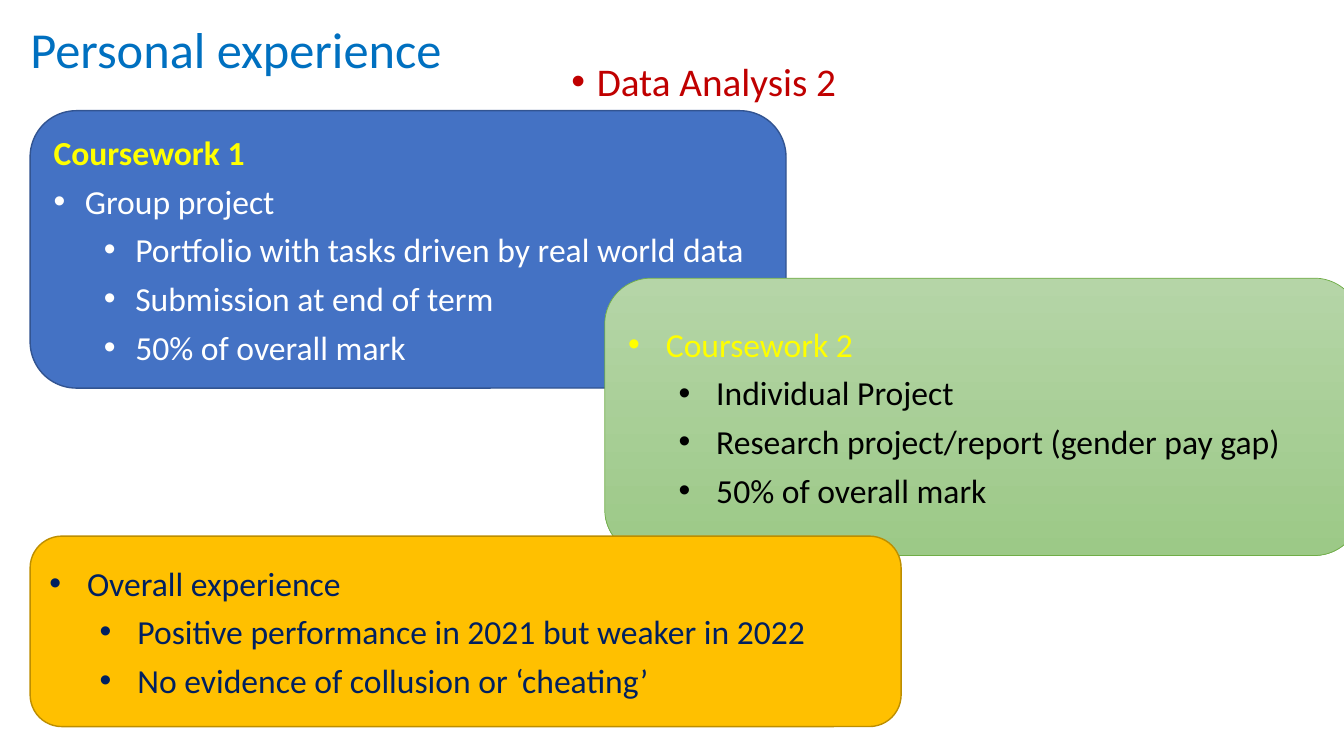
"""Builds the slide on personal experience with two pieces of coursework."""
from lxml import etree
from pptx import Presentation
from pptx.dml.color import RGBColor
from pptx.enum.shapes import MSO_SHAPE
from pptx.enum.text import MSO_ANCHOR, MSO_AUTO_SIZE, PP_ALIGN
from pptx.oxml.ns import qn
from pptx.util import Cm, Pt

ROUND = MSO_SHAPE.ROUNDED_RECTANGLE
MIDDLE = MSO_ANCHOR.MIDDLE
FIXED = MSO_AUTO_SIZE.NONE
LEFT = PP_ALIGN.LEFT
STEP = 1.27


def paint(color, value):
    color.rgb = RGBColor.from_string(value)


def style(para, size, color, hang=0, level=0, bold=False):
    para.alignment = LEFT
    para.level = level
    for run in para.runs:
        run.font.name = "Calibri"
        run.font.size = Pt(size)
        run.font.bold = bold
        paint(run.font.color, color)
    if hang:
        props = para._p.get_or_add_pPr()
        props.set("marL", str(Cm(hang + level * STEP)))
        props.set("indent", str(Cm(-hang)))
        etree.SubElement(props, qn("a:buFont")).set("typeface", "Arial")
        etree.SubElement(props, qn("a:buChar")).set("char", "•")


deck = Presentation()
deck.slide_width, deck.slide_height = Cm(33.87), Cm(19.05)
slide = deck.slides.add_slide(deck.slide_layouts[5])

title = slide.shapes.title
title.left, title.top, title.width, title.height = Cm(0.51), Cm(0.23), Cm(13.13), Cm(2.16)
frame = title.text_frame
frame.text = "Personal experience"
frame.auto_size = FIXED
frame.vertical_anchor = MIDDLE
para = frame.paragraphs[0]
para.line_spacing = 0.9
style(para, 36, "0070C0")

topic = slide.shapes.add_textbox(Cm(14.15), Cm(1.45), Cm(9.5), Cm(1.45))
frame = topic.text_frame
frame.text = "Data Analysis 2"
frame.word_wrap = True
para = frame.paragraphs[0]
para.line_spacing = 0.9
para.space_before, para.space_after = Pt(10), Pt(6)
style(para, 28, "C00000", 0.64)

cards = [
    ((0.76, 2.79, 19.05, 6.99), ["4472C4"], "325491", 1, "FFFF00", "FFFFFF", 0.79, [
        (0, "Coursework 1"),
        (0, "Group project"),
        (1, "Portfolio with tasks driven by real world data"),
        (1, "Submission at end of term"),
        (1, "50% of overall mark")]),
    ((15.24, 7.01, 19.05, 6.99), ["B5D5A7", "9CC987"], "70AD47", 0.5, "FFFF00", "000000", 0.95, [
        (0, "Coursework 2"),
        (1, "Individual Project"),
        (1, "Research project/report (gender pay gap)"),
        (1, "50% of overall mark")]),
    ((0.76, 13.51, 21.95, 4.8), ["FFC000"], "BD8E00", 1, "002060", "002060", 0.95, [
        (0, "Overall experience"),
        (1, "Positive performance in 2021 but weaker in 2022"),
        (1, "No evidence of collusion or ‘cheating’")]),
]

for box, fills, edge, width, head, body, hang, rows in cards:
    card = slide.shapes.add_shape(ROUND, *map(Cm, box))
    card.shadow.inherit = False
    if len(fills) > 1:
        card.fill.gradient()
        card.fill.gradient_angle = 270
        for place, (stop, value) in enumerate(zip(card.fill.gradient_stops, fills)):
            stop.position = place
            paint(stop.color, value)
    else:
        card.fill.solid()
        paint(card.fill.fore_color, fills[0])
    paint(card.line.color, edge)
    card.line.width = Pt(width)
    frame = card.text_frame
    frame.word_wrap = True
    frame.vertical_anchor = MIDDLE
    frame.text = "\n".join(text for level, text in rows)
    for para, (level, text) in zip(frame.paragraphs, rows):
        first = text == rows[0][1]
        plain = text == "Coursework 1"
        para.space_after = Pt(6)
        style(para, 24, head if first else body, 0 if plain else hang, level, plain)

deck.save("out.pptx")
